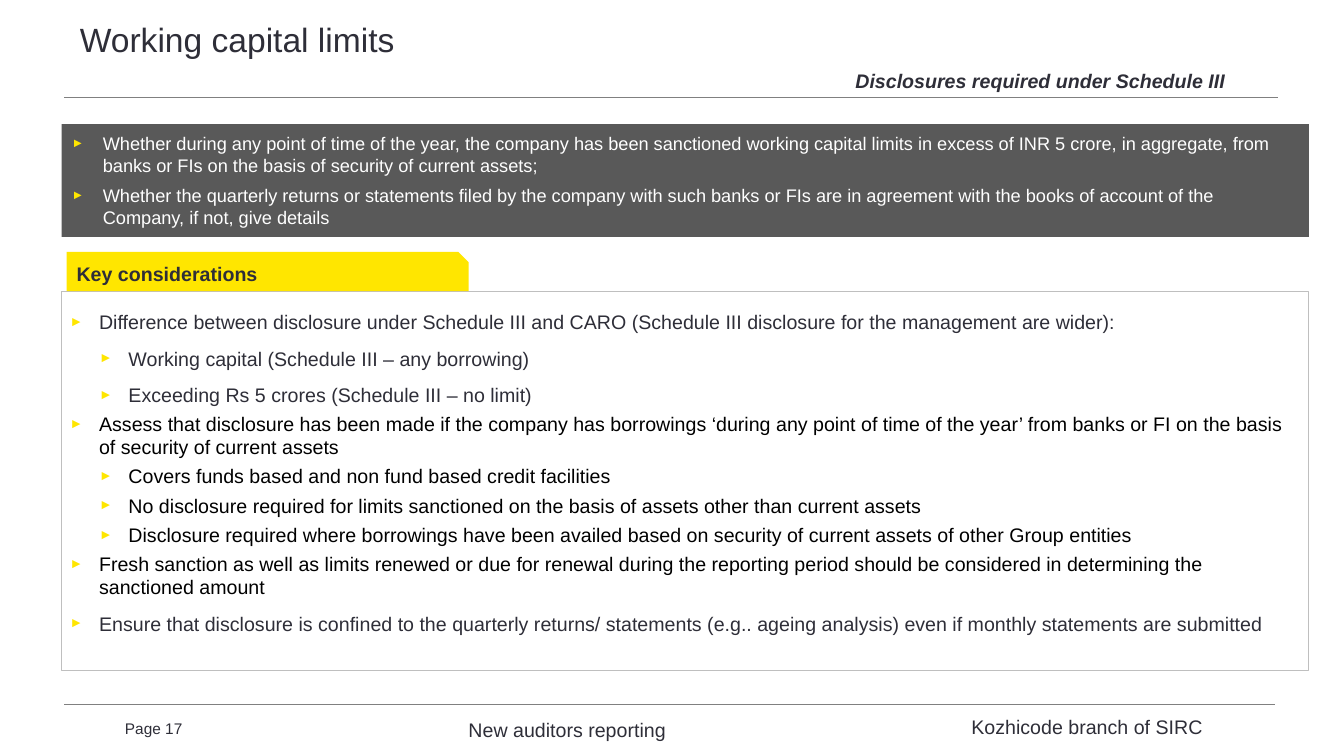
import pptx
import pptx.util
import pptx.dml.color
import pptx.enum.shapes
import pptx.enum.text
import pptx.oxml
import pptx.oxml.ns

Pt = pptx.util.Pt
Align = pptx.enum.text.PP_ALIGN
Anchor = pptx.enum.text.MSO_ANCHOR
COLORS = {"ink": "2E2E38", "black": "000000", "white": "FFFFFF", "yellow": "FFE600",
          "panel": "595959", "border": "BFBFBF", "rule": "808080"}

REQUIREMENTS = [
    "Whether during any point of time of the year, the company has been sanctioned working capital limits "
    "in excess of INR 5 crore, in aggregate, from banks or FIs on the basis of security of current assets;",
    "Whether the quarterly returns or statements filed by the company with such banks or FIs are in agreement "
    "with the books of account of the Company, if not, give details",
]
INK = {"color": "ink", "spacing": 1.3}
BLACK = {"color": "black"}
CONSIDERATIONS = [
    (0, INK, "Difference between disclosure under Schedule III and CARO "
             "(Schedule III disclosure for the management are wider):"),
    (1, INK, "Working capital (Schedule III – any borrowing)"),
    (1, INK, "Exceeding Rs 5 crores (Schedule III – no limit)"),
    (0, BLACK, "Assess that disclosure has been made if the company has borrowings ‘during any point of time "
               "of the year’ from banks or FI on the basis of security of current assets"),
    (1, BLACK, "Covers funds based and non fund based credit facilities"),
    (1, BLACK, "No disclosure required for limits sanctioned on the basis of assets other than current assets"),
    (1, BLACK, "Disclosure required where borrowings have been availed based on security of current assets "
               "of other Group entities"),
    (0, BLACK, "Fresh sanction as well as limits renewed or due for renewal during the reporting period "
               "should be considered in determining the sanctioned amount"),
    (0, INK, "Ensure that disclosure is confined to the quarterly returns/ statements (e.g.. ageing analysis) "
             "even if monthly statements are submitted"),
]


def rgb(name):
    return pptx.dml.color.RGBColor.from_string(COLORS[name])


def write(frame, text, size=14, color="ink", bold=False, italic=False, align=Align.LEFT,
          spacing=1.0, after=0, level=0, indent=None):
    para = frame.paragraphs[0]
    if para.runs:
        para = frame.add_paragraph()
    para.alignment, para.level = align, level
    para.line_spacing, para.space_before, para.space_after = spacing, Pt(0), Pt(after)
    span = para.add_run()
    span.text = text
    span.font.name, span.font.size = "Arial", Pt(size)
    span.font.bold, span.font.italic = bold, italic
    span.font.color.rgb = rgb(color)
    if indent:
        properties = para._p.get_or_add_pPr()
        properties.set("marL", str(Pt(indent * (level + 1))))
        properties.set("indent", str(-Pt(indent)))
        namespace = pptx.oxml.ns.nsdecls("a")
        for xml in (f'<a:buClr {namespace}><a:srgbClr val="{COLORS["yellow"]}"/></a:buClr>',
                    f'<a:buSzPct {namespace} val="70000"/>',
                    f'<a:buFont {namespace} typeface="Arial"/>',
                    f'<a:buChar {namespace} char="►"/>'):
            properties.append(pptx.oxml.parse_xml(xml))


def arrange(shape, box, margins=(7.2, 3.6, 7.2, 3.6), anchor=Anchor.TOP):
    shape.left, shape.top, shape.width, shape.height = map(Pt, box)
    frame = shape.text_frame
    frame.word_wrap, frame.auto_size = True, pptx.enum.text.MSO_AUTO_SIZE.NONE
    frame.vertical_anchor = anchor
    frame.margin_left, frame.margin_top, frame.margin_right, frame.margin_bottom = map(Pt, margins)
    return frame


def add_label(page, box, text, margins=(7.2, 3.6, 7.2, 3.6), **style):
    label = page.shapes.add_textbox(*map(Pt, box))
    write(arrange(label, box, margins), text, **style)


def add_rule(page, left, top, width):
    rule = page.shapes.add_connector(pptx.enum.shapes.MSO_CONNECTOR.STRAIGHT,
                                     Pt(left), Pt(top), Pt(left + width), Pt(top))
    rule.line.color.rgb, rule.line.width = rgb("rule"), Pt(0.75)
    rule._element.spPr.append(pptx.oxml.parse_xml(f'<a:effectLst {pptx.oxml.ns.nsdecls("a")}/>'))


def fill_header(page, box):
    left, top, width, height = box
    title = arrange(page.shapes.title, (left + 11, top, 865, 47), (0, 0, 0, 0))
    write(title, "Working capital limits", size=24, spacing=0.85)
    add_label(page, (left + 559.5, top + 17.3, 374, 34.6), "Disclosures required under Schedule III",
              (5.8, 8.6, 5.8, 5.8), bold=True, italic=True, spacing=1.3, after=4)
    add_rule(page, left, top + height, width)


def fill_requirements(panel, box):
    frame = arrange(panel, box, anchor=Anchor.MIDDLE)
    panel.fill.solid()
    panel.fill.fore_color.rgb = rgb("panel")
    for text in REQUIREMENTS:
        write(frame, text, size=13, color="white", after=6, indent=22.3)


def fill_considerations(page, panel, box):
    left, top, width, height = box
    tab_height = 28
    frame = arrange(panel, (left, top + tab_height, width, height - tab_height), (5.8, 8.6, 5.8, 5.8))
    panel.line.color.rgb, panel.line.width = rgb("border"), Pt(0.75)
    for level, style, text in CONSIDERATIONS:
        write(frame, text, level=level, after=4, indent=21, **style)
    tab_box = (left + 3.6, top, 287.3, tab_height)
    tab = page.shapes.add_shape(pptx.enum.shapes.MSO_SHAPE.SNIP_1_RECTANGLE, *map(Pt, tab_box))
    tab.adjustments[0] = 0.26
    tab.shadow.inherit = False
    tab.fill.solid()
    tab.fill.fore_color.rgb = rgb("yellow")
    tab.line.fill.background()
    write(arrange(tab, tab_box), "Key considerations", bold=True)


def fill_footer(page, box):
    left, top, width, height = box
    add_rule(page, left, top, width)
    add_label(page, (left + 43.3, top + 6.5, 70, height), "Page 17", (0, 3.6, 7.2, 3.6), size=11)
    add_label(page, (left + 237.7, top + 5.8, 243.4, height), "New auditors reporting", align=Align.CENTER)
    add_label(page, (left + 609.2, top + 3.6, 243.4, height), "Kozhicode branch of SIRC", align=Align.CENTER)


def main():
    deck = pptx.Presentation()
    deck.slide_width, deck.slide_height = Pt(960.5), Pt(540)
    page = deck.slides.add_slide(deck.slide_layouts.get_by_name("Two Content"))
    requirements, considerations = list(page.placeholders)[1:]
    fill_header(page, (46, 18, 867, 51.8))
    fill_requirements(requirements, (44, 88.6, 891.4, 80.6))
    fill_considerations(page, considerations, (44, 180, 891.4, 298.8))
    fill_footer(page, (46, 503.3, 865, 14.4))
    deck.save("out.pptx")


if __name__ == "__main__":
    main()
